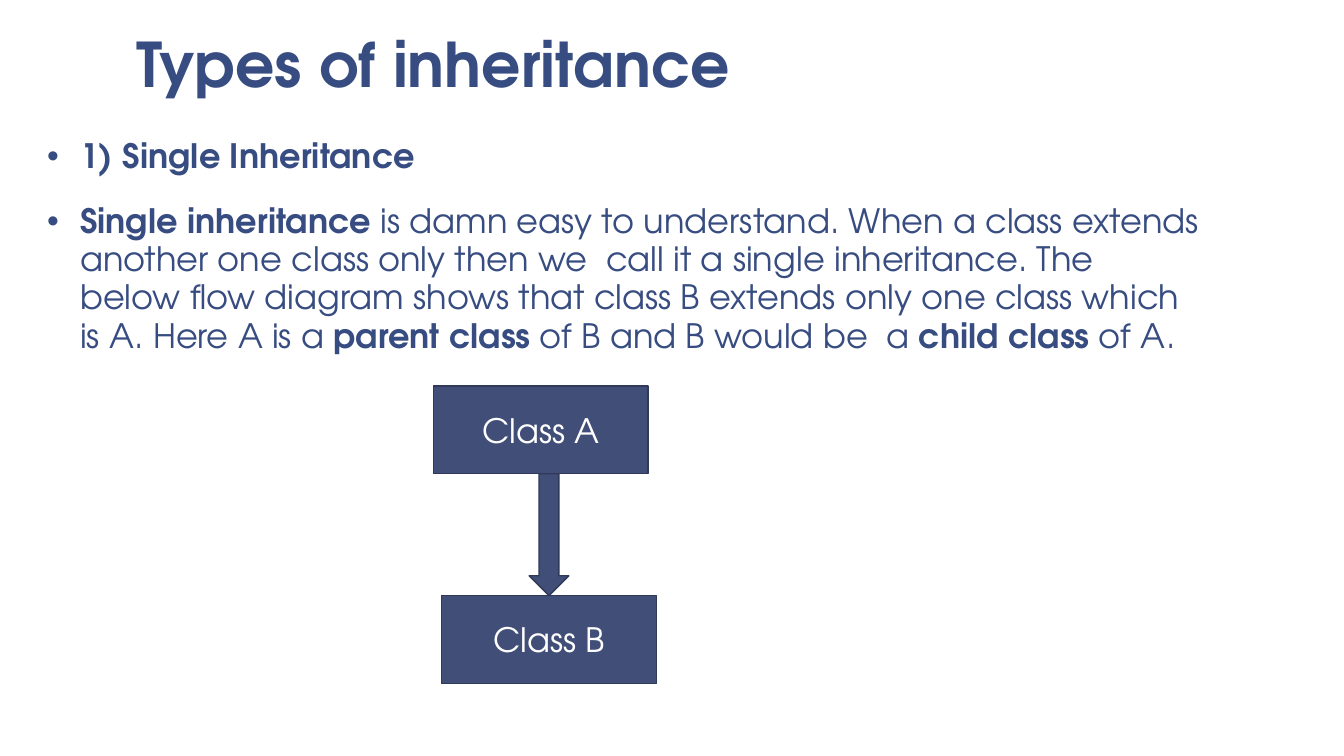
from dataclasses import dataclass

from lxml import etree
from pptx import Presentation
from pptx.dml.color import RGBColor
from pptx.enum import shapes, text
from pptx.oxml.ns import qn
from pptx.util import Cm, Pt


@dataclass(frozen=True)
class Theme:
    font: str = "TeX Gyre Adventor"
    ink: str = "374C81"
    fill: str = "414E77"
    outline: str = "303A58"
    light: str = "FFFFFF"
    title_size: float = 44
    body_size: float = 24
    bullet_gap: float = 18.7


@dataclass(frozen=True)
class Span:
    words: str
    bold: bool = False


@dataclass(frozen=True)
class Box:
    """Position and size in centimetres."""
    left: float
    top: float
    width: float
    height: float

    def lengths(self) -> tuple:
        return Cm(self.left), Cm(self.top), Cm(self.width), Cm(self.height)


@dataclass(frozen=True)
class ClassBox:
    label: str
    box: Box


THEME = Theme()
CLASS_W, CLASS_H = 5.41, 2.21
ARROW_W = 1.0

TITLE = Span("Types of inheritance", True)
BULLETS = [
    [Span("1) Single Inheritance", True)],
    [
        Span("Single inheritance", True),
        Span(" is damn easy to understand. When a class extends another one class "
             "only then we  call it a single inheritance. The below flow diagram shows "
             "that class B extends only one class which is A. Here A is a "),
        Span("parent class", True),
        Span(" of B and B would be  a "),
        Span("child class", True),
        Span(" of A."),
    ],
]
PARENT = ClassBox("Class A", Box(10.92, 9.73, CLASS_W, CLASS_H))
CHILD = ClassBox("Class B", Box(11.13, 15.01, CLASS_W, CLASS_H))


def add_run(p, span: Span, size: float, color: str) -> None:
    r = p.add_run()
    r.text = span.words
    r.font.name = THEME.font
    r.font.size = Pt(size)
    r.font.bold = span.bold
    r.font.color.rgb = RGBColor.from_string(color)


def add_text_frame(s, box: Box, bottom_inset: float = 0.18):
    tf = s.shapes.add_textbox(*box.lengths()).text_frame
    tf.word_wrap = True
    tf.margin_left = tf.margin_right = Cm(0.33)
    tf.margin_top, tf.margin_bottom = Cm(0.18), Cm(bottom_inset)
    return tf


def set_bullet(p) -> None:
    """Give the paragraph a hanging round bullet."""
    ppr = p._p.get_or_add_pPr()
    ppr.set("marL", str(Cm(0.83)))
    ppr.set("indent", str(-Cm(0.83)))
    etree.SubElement(ppr, qn("a:buFont")).set("typeface", "Arial")
    etree.SubElement(ppr, qn("a:buChar")).set("char", "•")


def add_title(s) -> None:
    tf = add_text_frame(s, Box(3.1, 0.2, 28.22, 3.89), bottom_inset=1.75)
    tf.vertical_anchor = text.MSO_ANCHOR.BOTTOM
    p = tf.paragraphs[0]
    p.line_spacing = 0.85
    add_run(p, TITLE, THEME.title_size, THEME.ink)


def add_bullets(s) -> None:
    tf = add_text_frame(s, Box(0.86, 3.3, 29.79, 14.22))
    for i, spans in enumerate(BULLETS):
        p = tf.add_paragraph() if i else tf.paragraphs[0]
        set_bullet(p)
        p.line_spacing = 0.95
        if i:
            p.space_before = Pt(THEME.bullet_gap)
        for span in spans:
            add_run(p, span, THEME.body_size, THEME.ink)


def add_block(s, kind: shapes.MSO_SHAPE, box: Box):
    sp = s.shapes.add_shape(kind, *box.lengths())
    sp.shadow.inherit = False
    sp.fill.solid()
    sp.fill.fore_color.rgb = RGBColor.from_string(THEME.fill)
    sp.line.color.rgb = RGBColor.from_string(THEME.outline)
    sp.line.width = Pt(1)
    return sp


def add_class(s, item: ClassBox) -> None:
    tf = add_block(s, shapes.MSO_SHAPE.RECTANGLE, item.box).text_frame
    tf.word_wrap = True
    tf.vertical_anchor = text.MSO_ANCHOR.MIDDLE
    p = tf.paragraphs[0]
    p.alignment = text.PP_ALIGN.CENTER
    add_run(p, Span(item.label), THEME.body_size, THEME.light)


def add_arrow(s, start: Box, end: Box) -> None:
    """Fill the gap between two boxes, centred on the lower one."""
    top = start.top + start.height
    left = end.left + (end.width - ARROW_W) / 2
    add_block(s, shapes.MSO_SHAPE.DOWN_ARROW, Box(left, top, ARROW_W, end.top - top))


def main() -> None:
    prs = Presentation()
    prs.slide_width, prs.slide_height = Cm(33.87), Cm(19.05)
    s = prs.slides.add_slide(prs.slide_layouts[6])
    add_title(s)
    add_bullets(s)
    for item in (PARENT, CHILD):
        add_class(s, item)
    add_arrow(s, PARENT.box, CHILD.box)
    prs.save("out.pptx")


if __name__ == "__main__":
    main()
